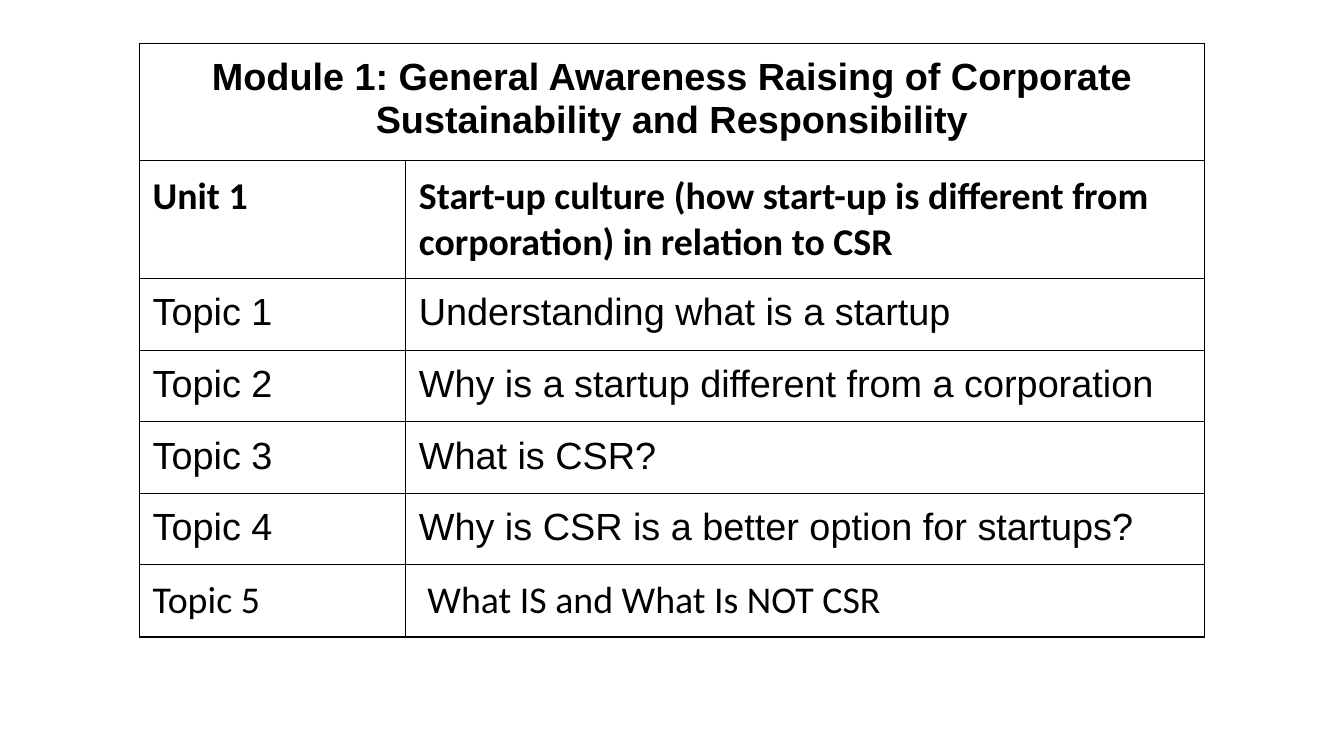
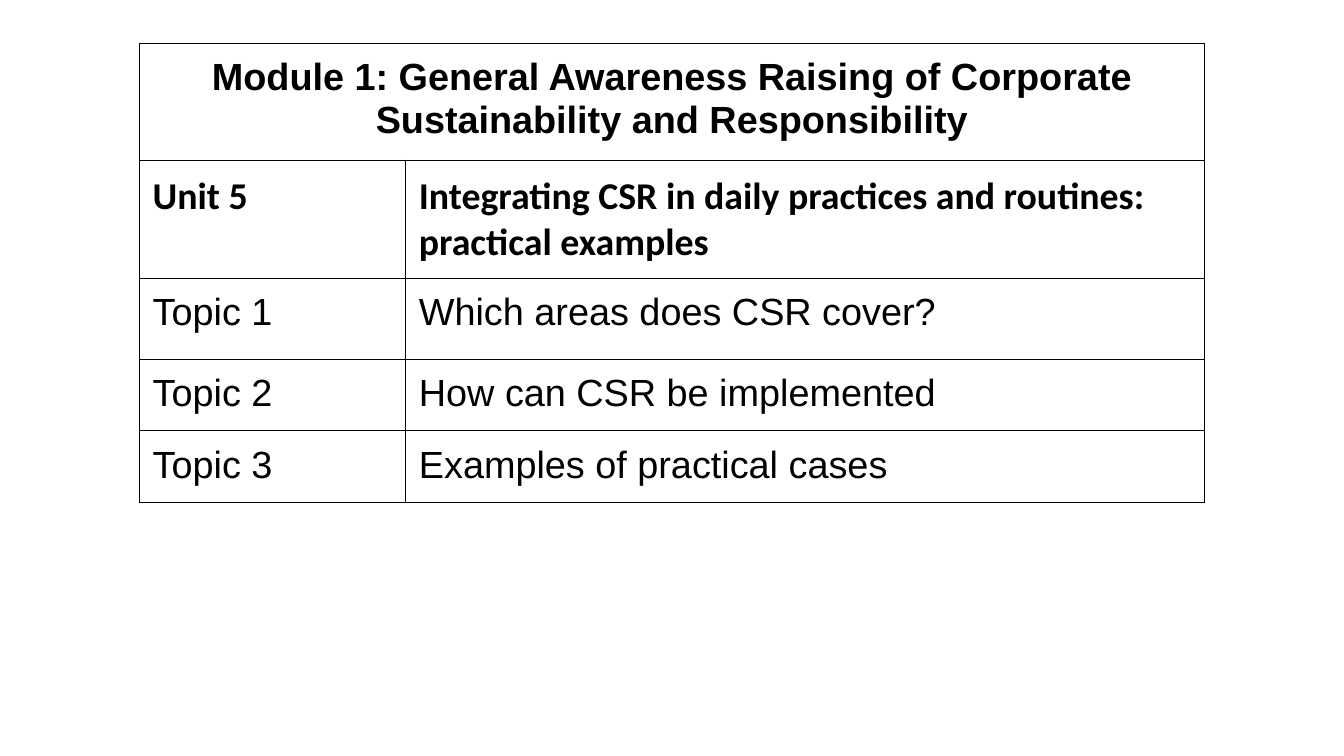
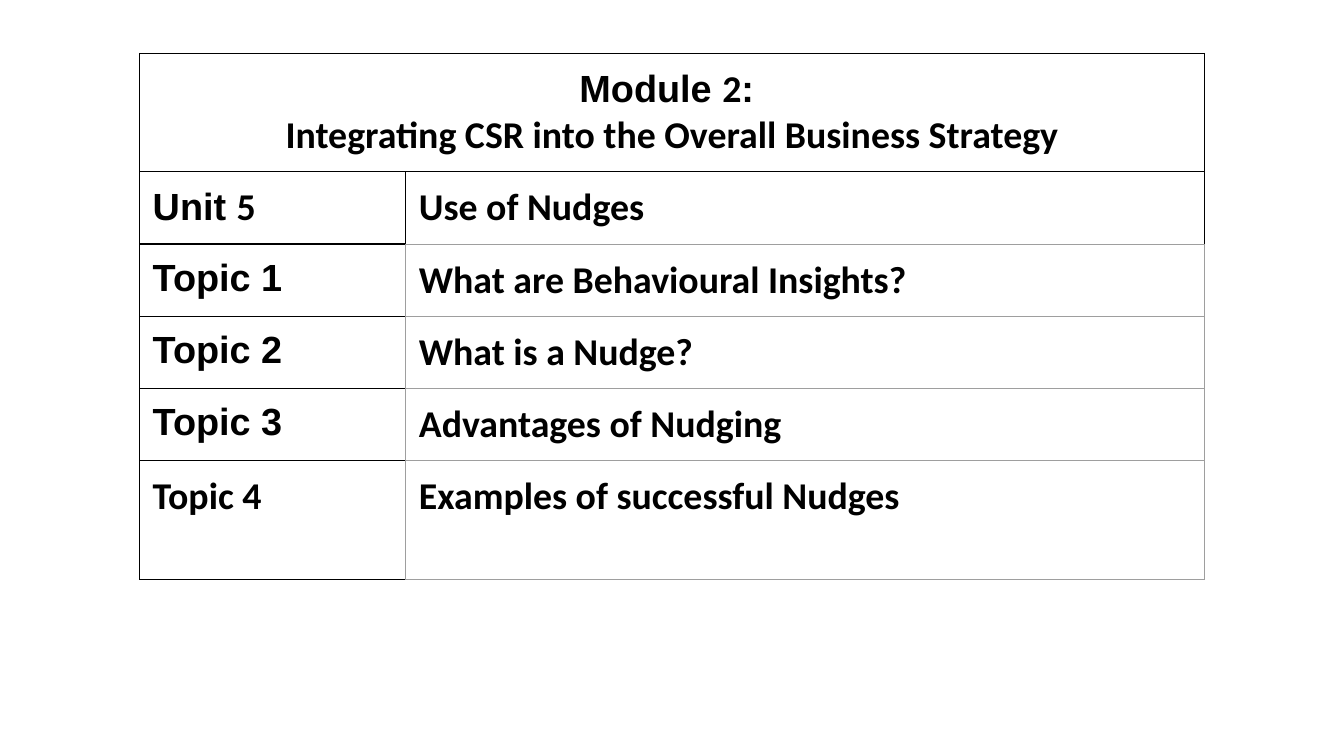
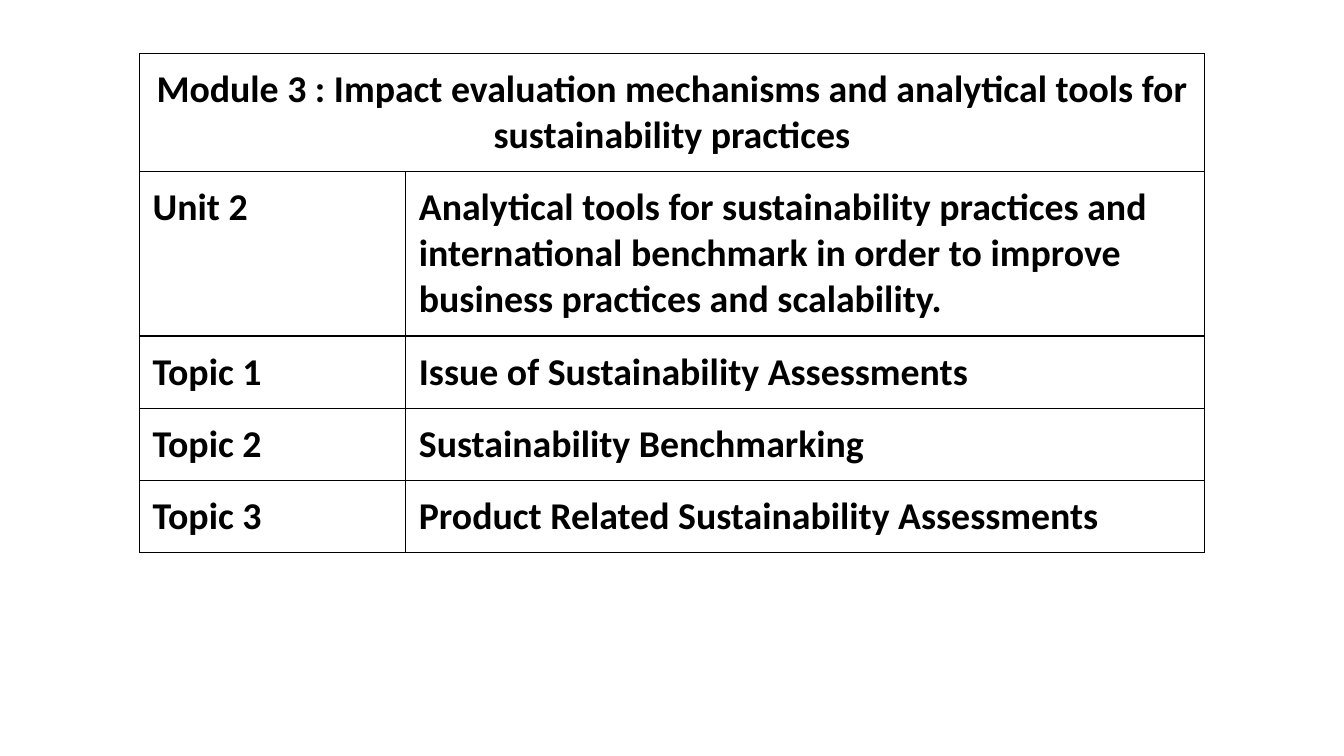
"""Build four slides, each with a table of one training unit and its topics."""
from dataclasses import dataclass

from lxml.etree import SubElement
from pptx import Presentation
from pptx.dml.color import RGBColor
from pptx.enum.text import MSO_ANCHOR as Anchor, PP_ALIGN as Align
from pptx.oxml.ns import qn
from pptx.slide import Slide
from pptx.table import _Cell as Cell
from pptx.util import Inches, Pt

COLORS = {"text": "000000", "rule": "000000", "soft_rule": "9E9E9E", "paper": "FFFFFF"}
SANS, BODY = "Arial", "Calibri"
SLIDE_WIDTH, SLIDE_HEIGHT = 13.33, 7.5
TABLE_WIDTH = 10.56
COLUMN_SHARES = (0.25, 0.75)
TEXT_SIZE, CELL_INSET = 27, 0.13
ONE_LINE, TWO_LINES, THREE_LINES = 0.71, 1.16, 1.6
LAYOUT_BLANK = 6
NO_TABLE_STYLE = "{2D5ABB26-0587-4C30-8999-92F81FD0307C}"


@dataclass(frozen=True)
class Span:
    """A run of text in one font."""
    text: str
    face: str = BODY
    bold: bool = True


@dataclass(frozen=True)
class Row:
    """A label, its description and the row height in inches."""
    label: tuple[Span, ...]
    description: tuple[Span, ...]
    height: float = ONE_LINE


@dataclass(frozen=True)
class Rule:
    """A cell border."""
    color: str
    width: float


@dataclass(frozen=True)
class UnitTable:
    """A module heading, its unit and the topics of the unit."""
    top: float
    heading: tuple[tuple[Span, ...], ...]
    unit: Row
    topics: tuple[Row, ...]
    rule: Rule = Rule("rule", 1)
    topic_rule: Rule = Rule("rule", 1)
    unit_filled: bool = False


def plain_topic(number: int, text: str, height: float = ONE_LINE) -> Row:
    """Return a topic row in regular sans type."""
    return Row((Span(f"Topic {number}", SANS, False),), (Span(text, SANS, False),), height)


def bold_topic(number: int, text: str, face: str = BODY, height: float = ONE_LINE) -> Row:
    """Return a bold topic row whose label has the given font."""
    return Row((Span(f"Topic {number}", face),), (Span(text),), height)


AWARENESS = ((Span("Module 1: General Awareness Raising of Corporate "
                   "Sustainability and Responsibility", SANS),),)
THIN_RULE = Rule("rule", 0.75)

UNIT_TABLES = (
    UnitTable(
        0.43, AWARENESS,
        Row((Span("Unit 1"),),
            (Span("Start-up culture (how start-up is different from corporation) "
                  "in relation to CSR"),), TWO_LINES),
        (plain_topic(1, "Understanding what is a startup"),
         plain_topic(2, "Why is a startup different from a corporation"),
         plain_topic(3, "What is CSR?"),
         plain_topic(4, "Why is CSR is a better option for startups?"),
         Row((Span("Topic 5", bold=False),),
             (Span(" "), Span("What IS and What Is NOT CSR", bold=False)))),
    ),
    UnitTable(
        0.43, AWARENESS,
        Row((Span("Unit 5"),),
            (Span("Integrating CSR in daily practices and routines: practical examples"),),
            TWO_LINES),
        (plain_topic(1, "Which areas does CSR cover?", 0.8),
         plain_topic(2, "How can CSR be implemented"),
         plain_topic(3, "Examples of practical cases")),
        rule=THIN_RULE, topic_rule=THIN_RULE,
    ),
    UnitTable(
        0.53,
        ((Span("Module ", SANS), Span("2"), Span(": ", SANS)),
         (Span("Integrating CSR into the Overall Business Strategy"),)),
        Row((Span("Unit ", SANS), Span("5")), (Span("Use of Nudges"),)),
        (bold_topic(1, "What are Behavioural Insights?", SANS),
         bold_topic(2, "What is a Nudge?", SANS),
         bold_topic(3, "Advantages of Nudging", SANS),
         bold_topic(4, "Examples of successful Nudges", height=1.18)),
        topic_rule=Rule("soft_rule", 0.75), unit_filled=True,
    ),
    UnitTable(
        0.53,
        ((Span("Module 3 : Impact evaluation mechanisms and analytical tools "
               "for sustainability practices"),),),
        Row((Span("Unit 2"),),
            (Span("Analytical tools for sustainability practices and international "
                  "benchmark in order to improve business practices and scalability."),),
            THREE_LINES),
        (bold_topic(1, "Issue of Sustainability Assessments"),
         bold_topic(2, "Sustainability Benchmarking"),
         bold_topic(3, "Product Related Sustainability Assessments")),
        unit_filled=True,
    ),
)


def write_cell(cell: Cell, lines: tuple[tuple[Span, ...], ...], align: Align = Align.LEFT) -> None:
    """Write lines of spans into a cell."""
    cell.margin_left = cell.margin_right = Inches(CELL_INSET)
    cell.margin_top = cell.margin_bottom = Inches(CELL_INSET)
    cell.vertical_anchor = Anchor.TOP
    para = cell.text_frame.paragraphs[0]
    para.alignment = align
    for index, spans in enumerate(lines):
        if index:
            para.add_line_break()
        for span in spans:
            run = para.add_run()
            run.text = span.text
            run.font.name = span.face
            run.font.size = Pt(TEXT_SIZE)
            run.font.bold = span.bold
            run.font.color.rgb = RGBColor.from_string(COLORS["text"])


def finish_cell(cell: Cell, left: Rule, right: Rule, top: Rule, bottom: Rule, filled: bool) -> None:
    """Give a cell its four borders and its fill."""
    properties = cell._tc.get_or_add_tcPr()
    for tag, rule in (("a:lnL", left), ("a:lnR", right), ("a:lnT", top), ("a:lnB", bottom)):
        line = SubElement(properties, qn(tag), w=str(Pt(rule.width)))
        solid = SubElement(line, qn("a:solidFill"))
        SubElement(solid, qn("a:srgbClr"), val=COLORS[rule.color])
    if filled:
        cell.fill.solid()
        cell.fill.fore_color.rgb = RGBColor.from_string(COLORS["paper"])
    else:
        cell.fill.background()


def draw_table(page: Slide, unit_table: UnitTable) -> None:
    """Draw a unit table, centred across the slide."""
    rows = (unit_table.unit, *unit_table.topics)
    heights = (TWO_LINES, *(row.height for row in rows))
    frame = page.shapes.add_table(
        len(heights), len(COLUMN_SHARES), Inches((SLIDE_WIDTH - TABLE_WIDTH) / 2),
        Inches(unit_table.top), Inches(TABLE_WIDTH), Inches(sum(heights)))
    table = frame.table
    table.first_row = table.horz_banding = False
    table._tbl.tblPr.find(qn("a:tableStyleId")).text = NO_TABLE_STYLE
    for column, share in zip(table.columns, COLUMN_SHARES):
        column.width = Inches(TABLE_WIDTH * share)
    for table_row, height in zip(table.rows, heights):
        table_row.height = Inches(height)

    heading = table.cell(0, 0)
    heading.merge(table.cell(0, 1))
    write_cell(heading, unit_table.heading, Align.CENTER)
    for index, row in enumerate(rows, start=1):
        write_cell(table.cell(index, 0), (row.label,))
        write_cell(table.cell(index, 1), (row.description,))

    rule, topic_rule = unit_table.rule, unit_table.topic_rule
    for index in range(len(heights)):
        side = topic_rule if index > 1 else rule
        below = topic_rule if index > 0 else rule
        filled = unit_table.unit_filled and index == 1
        finish_cell(table.cell(index, 0), rule, side, rule, rule, filled)
        finish_cell(table.cell(index, 1), side, side, side, below, filled)


def main() -> None:
    """Build and save the deck."""
    deck = Presentation()
    deck.slide_width, deck.slide_height = Inches(SLIDE_WIDTH), Inches(SLIDE_HEIGHT)
    for unit_table in UNIT_TABLES:
        draw_table(deck.slides.add_slide(deck.slide_layouts[LAYOUT_BLANK]), unit_table)
    deck.save("out.pptx")


if __name__ == "__main__":
    main()
